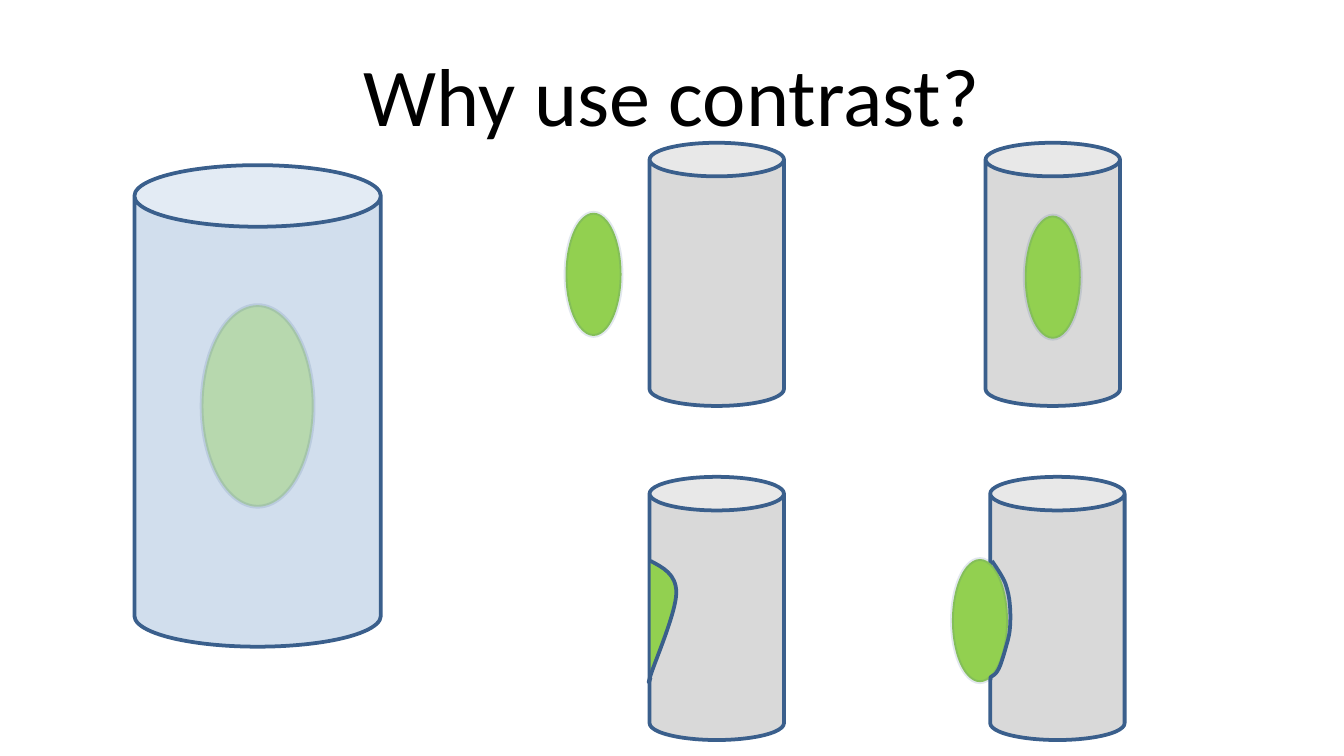
from pptx import Presentation
from pptx.dml.color import RGBColor
from pptx.enum.shapes import MSO_SHAPE
from pptx.enum.text import MSO_ANCHOR, PP_ALIGN
from pptx.oxml.ns import qn
from pptx.util import Pt
from lxml import etree

CAN, OVAL = MSO_SHAPE.CAN, MSO_SHAPE.OVAL
MIDDLE, CENTER = MSO_ANCHOR.MIDDLE, PP_ALIGN.CENTER
COLORS = {
    "text": "000000",
    "glass": "4F81BD",
    "vessel": "D9D9D9",
    "lesion": "92D050",
    "outline": "3A5F8C",
}


class SlideBuilder:
    font = "Calibri"
    line_width = 2

    def __init__(self, slide):
        self.slide = slide

    def color(self, target, name, opacity=100):
        target.solid()
        target.fore_color.rgb = RGBColor.from_string(COLORS[name])
        if opacity < 100:
            rgb = target._xPr.find(qn("a:solidFill")).find(qn("a:srgbClr"))
            etree.SubElement(rgb, qn("a:alpha"), val=str(opacity * 1000))

    def style(self, shape, fill, opacity=100, line_opacity=100):
        shape.shadow.inherit = False
        if fill:
            self.color(shape.fill, fill, opacity)
        else:
            shape.fill.background()
        shape.line.width = Pt(self.line_width)
        self.color(shape.line.fill, "outline", line_opacity)

    def title(self, text, left, top, width, height):
        box = self.slide.shapes.add_textbox(Pt(left), Pt(top), Pt(width), Pt(height))
        frame = box.text_frame
        frame.word_wrap = True
        frame.vertical_anchor = MIDDLE
        frame.text = text
        paragraph = frame.paragraphs[0]
        paragraph.alignment = CENTER
        font = paragraph.runs[0].font
        font.name, font.size = self.font, Pt(44)
        font.color.rgb = RGBColor.from_string(COLORS["text"])

    def preset(self, kind, left, top, width, height, fill, opacity=100, line_opacity=100):
        shape = self.slide.shapes.add_shape(kind, Pt(left), Pt(top), Pt(width), Pt(height))
        self.style(shape, fill, opacity, line_opacity)

    def vessel(self, left, top, width=72, height=141, fill="vessel", opacity=100):
        self.preset(CAN, left, top, width, height, fill, opacity)

    def lesion(self, left, top, width=30, height=66, opacity=100):
        self.preset(OVAL, left, top, width, height, "lesion", opacity, 14)

    def curve(self, start, curves, fill=None):
        builder = self.slide.shapes.build_freeform(Pt(start[0]), Pt(start[1]), scale=1.0)
        ends = [(Pt(x), Pt(y)) for *_, (x, y) in curves]
        builder.add_line_segments(ends, close=False)
        shape = builder.convert_to_shape()
        segments = list(shape._element.iter(qn("a:lnTo")))
        for segment, controls in zip(segments, curves):
            bezier = etree.Element(qn("a:cubicBezTo"))
            for x, y in controls:
                etree.SubElement(
                    bezier, qn("a:pt"),
                    x=str(Pt(x) - shape.left), y=str(Pt(y) - shape.top),
                )
            segment.getparent().replace(segment, bezier)
        self.style(shape, fill)


def main():
    deck = Presentation()
    deck.slide_width, deck.slide_height = Pt(720), Pt(405)
    page = SlideBuilder(deck.slides.add_slide(deck.slide_layouts[6]))

    page.title("Why use contrast?", 36, 16.5, 648, 67.5)

    page.vessel(72, 88.5, 132, 258, "glass", 26)
    page.lesion(108, 163.5, 60, 108, 40)

    left_column, right_column = 348, 528
    upper_row, lower_row = 76.5, 255.5

    page.vessel(left_column, lower_row)
    page.vessel(right_column, upper_row)
    page.vessel(left_column, upper_row)
    page.lesion(303, 114)

    wall_bulge = [
        ((355, 304), (362.3, 307.5), (362.3, 317.5)),
        ((362.3, 327.5), (351.5, 353), (349, 360.5)),
        ((346.5, 368), (347.8, 365.8), (348.5, 363)),
    ]
    page.curve((348.5, 300.5), wall_bulge, "lesion")

    page.lesion(549, 115.5)

    page.vessel(530.5, lower_row)
    page.lesion(510, 299.5)
    wall_dent = [
        ((534.2, 304.5), (537.1, 308.9), (538.6, 312.5)),
        ((540, 316.8), (540.7, 319.7), (541, 324)),
        ((541.4, 327.6), (541.4, 333.4), (541, 337)),
        ((540.7, 341.3), (539.3, 344.9), (538.6, 347.8)),
        ((537.8, 350.6), (537.1, 352.8), (536.4, 355)),
        ((535.7, 357.1), (534.7, 359.3), (533.5, 360.7)),
        ((532.1, 362.2), (530.9, 362.3), (530.6, 362.9)),
        ((530.2, 363.6), (530.5, 363.8), (530.6, 364.3)),
    ]
    page.curve((531.4, 300.5), wall_dent)

    deck.save("out.pptx")


if __name__ == "__main__":
    main()
